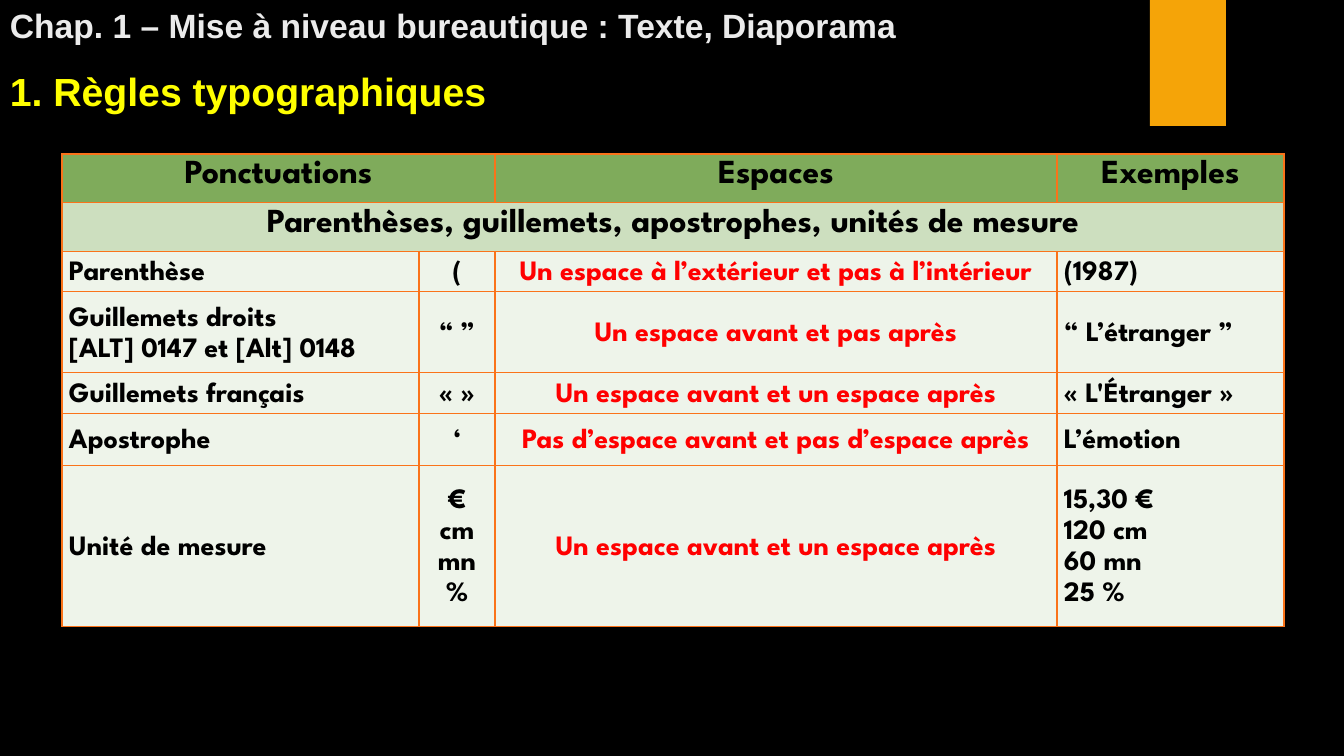
from pptx import Presentation
from pptx.dml.color import RGBColor
from pptx.enum.shapes import MSO_SHAPE
from pptx.enum.text import MSO_ANCHOR, PP_ALIGN
from pptx.oxml import parse_xml
from pptx.oxml.ns import nsdecls
from pptx.util import Emu, Pt

EMU_PER_PX = 914400 / 100.8

BLACK = RGBColor(0x00, 0x00, 0x00)
AMBER = RGBColor(0xF5, 0xA4, 0x08)
PALE_GREY = RGBColor(0xEB, 0xEB, 0xEB)
YELLOW = RGBColor(0xFF, 0xFF, 0x00)
RED = RGBColor(0xFF, 0x00, 0x00)
ORANGE = RGBColor(0xFA, 0x73, 0x1A)
HEADER_GREEN = RGBColor(0x7F, 0xAB, 0x5B)
SECTION_GREEN = RGBColor(0xCD, 0xDF, 0xBF)
BODY_GREEN = RGBColor(0xEE, 0xF4, 0xEA)

HEADING_FONT = "Arial"
TABLE_FONT = "League Spartan"

COLUMN_WIDTHS = [357, 76, 562, 227]
ROW_HEIGHTS = [48, 49, 40, 81, 40, 52, 161]
COLUMN_ALIGNS = [PP_ALIGN.LEFT, PP_ALIGN.CENTER, PP_ALIGN.CENTER, PP_ALIGN.LEFT]
COLUMN_COLORS = [BLACK, BLACK, RED, BLACK]

# Header cells by column; the first one spans two columns
HEADERS = {0: "Ponctuations", 2: "Espaces", 3: "Exemples"}
SECTION = "Parenthèses, guillemets, apostrophes, unités de mesure"

# Each cell is a list of paragraphs
RULES = [
    [["Parenthèse"], ["("],
     ["Un espace à l’extérieur et pas à l’intérieur"], ["(1987)"]],
    [["Guillemets droits", "[ALT] 0147 et [Alt] 0148"], ["“ ”"],
     ["Un espace avant et pas après"], ["“ L’étranger ”"]],
    [["Guillemets français"], ["« »"],
     ["Un espace avant et un espace après"], ["« L'Étranger »"]],
    [["Apostrophe"], ["‘"],
     ["Pas d’espace avant et pas d’espace après"], ["L’émotion"]],
    [["Unité de mesure"], ["€", "cm", "mn", "%"],
     ["Un espace avant et un espace après"],
     ["15,30 €", "120 cm", "60 mn", "25 %"]],
]


def px(length):
    return Emu(round(length * EMU_PER_PX))


def add_span(para, text, font_name, size, color):
    span = para.add_run()
    span.text = text
    span.font.name = font_name
    span.font.size = Pt(size)
    span.font.bold = True
    span.font.color.rgb = color


def add_heading(page, left, top, width, height, text, size, color, anchor):
    box = page.shapes.add_textbox(px(left), px(top), px(width), px(height))
    frame = box.text_frame
    frame.word_wrap = True
    frame.vertical_anchor = anchor
    add_span(frame.paragraphs[0], text, HEADING_FONT, size, color)


def add_bar(page, left, top, width, height):
    bar = page.shapes.add_shape(
        MSO_SHAPE.RECTANGLE, px(left), px(top), px(width), px(height))
    bar.shadow.inherit = False
    bar.fill.solid()
    bar.fill.fore_color.rgb = AMBER
    bar.line.fill.background()


def style_cell(cell, fill_color):
    cell.margin_left = cell.margin_right = px(7)
    cell.margin_top = cell.margin_bottom = 0
    cell.fill.solid()
    cell.fill.fore_color.rgb = fill_color
    # Border lines come before the fill in the cell properties
    properties = cell._tc.get_or_add_tcPr()
    for position, side in enumerate(("lnL", "lnR", "lnT", "lnB")):
        properties.insert(position, parse_xml(
            f'<a:{side} {nsdecls("a")} w="{Pt(1)}"><a:solidFill>'
            f'<a:srgbClr val="{ORANGE}"/></a:solidFill></a:{side}>'))


def write_cell(cell, lines, size, color, align, anchor):
    cell.vertical_anchor = anchor
    frame = cell.text_frame
    for index, line in enumerate(lines):
        para = frame.add_paragraph() if index else frame.paragraphs[0]
        para.alignment = align
        para.line_spacing = 1.2
        properties = para._p.get_or_add_pPr()
        properties.set("marL", str(px(8)))
        properties.set("indent", str(-px(8)))
        add_span(para, line, TABLE_FONT, size, color)


def add_rules_table(page, left, top):
    table = page.shapes.add_table(
        len(ROW_HEIGHTS), len(COLUMN_WIDTHS), px(left), px(top),
        px(sum(COLUMN_WIDTHS)), px(sum(ROW_HEIGHTS))).table
    table.first_row = table.horz_banding = False
    for column, width in zip(table.columns, COLUMN_WIDTHS):
        column.width = px(width)
    row_fills = [HEADER_GREEN, SECTION_GREEN] + [BODY_GREEN] * len(RULES)
    for row, height, fill_color in zip(table.rows, ROW_HEIGHTS, row_fills):
        row.height = px(height)
        for cell in row.cells:
            style_cell(cell, fill_color)

    # Header and section rows
    table.cell(0, 0).merge(table.cell(0, 1))
    table.cell(1, 0).merge(table.cell(1, 3))
    titles = [(0, column, text) for column, text in HEADERS.items()]
    for row, column, text in titles + [(1, 0, SECTION)]:
        write_cell(table.cell(row, column), [text], 24, BLACK,
                   PP_ALIGN.CENTER, MSO_ANCHOR.TOP)

    # Rule rows
    for row, rule in enumerate(RULES, start=2):
        for column, lines in enumerate(rule):
            write_cell(table.cell(row, column), lines, 20,
                       COLUMN_COLORS[column], COLUMN_ALIGNS[column],
                       MSO_ANCHOR.MIDDLE)


def main():
    deck = Presentation()
    deck.slide_width, deck.slide_height = px(1344), px(756)
    page = deck.slides.add_slide(deck.slide_layouts[6])
    page.background.fill.solid()
    page.background.fill.fore_color.rgb = BLACK

    # Chapter and section headings
    add_bar(page, 1150, 0, 76, 126)
    add_heading(page, 0, 0, 1344, 50,
                "Chap. 1 – Mise à niveau bureautique : Texte, Diaporama",
                24, PALE_GREY, MSO_ANCHOR.BOTTOM)
    add_heading(page, 0, 62, 834, 57, "1. Règles typographiques",
                28, YELLOW, MSO_ANCHOR.TOP)

    # Typographic rules
    add_rules_table(page, 62, 154)
    deck.save("out.pptx")


if __name__ == "__main__":
    main()
